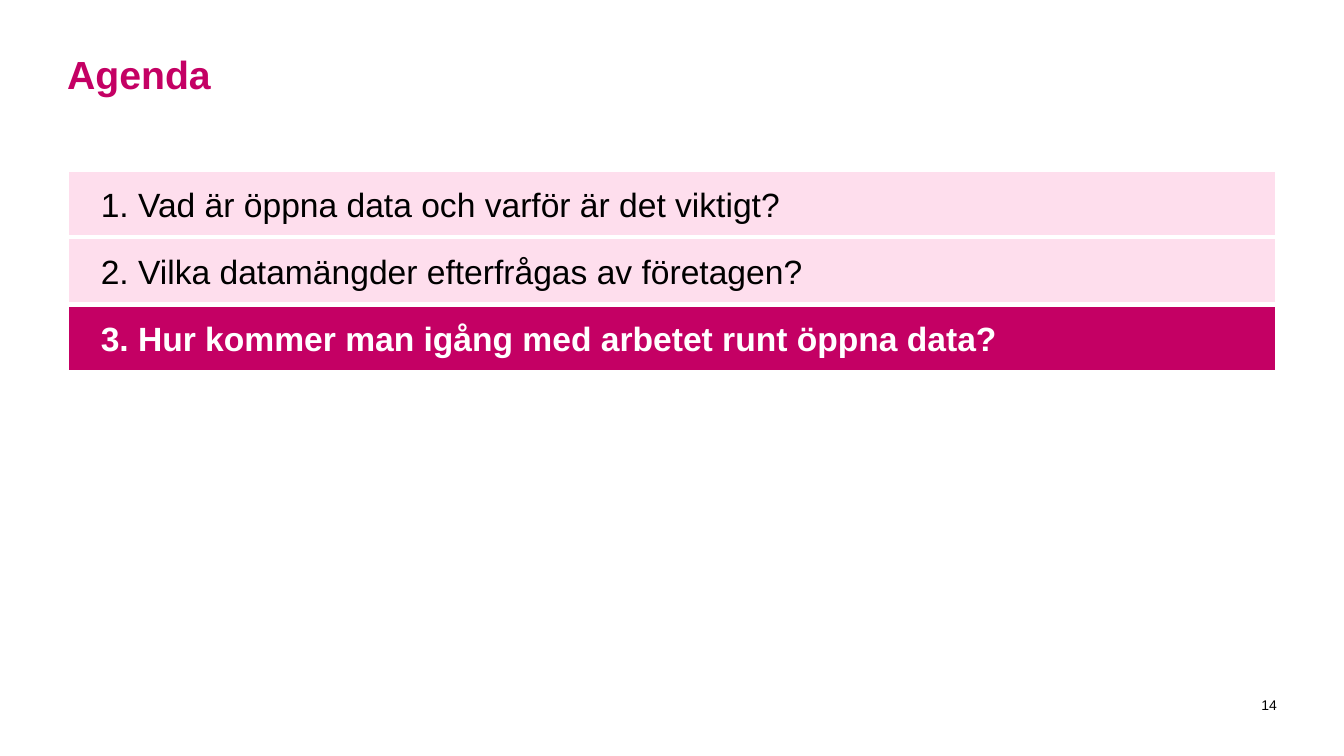
import pptx
import pptx.dml.color
import pptx.enum.shapes
import pptx.enum.text
import pptx.util

Pt = pptx.util.Pt
ALIGN = pptx.enum.text.PP_ALIGN
ANCHOR = pptx.enum.text.MSO_ANCHOR

MAGENTA = pptx.dml.color.RGBColor(0xC4, 0x00, 0x64)
PINK = pptx.dml.color.RGBColor(0xFE, 0xDE, 0xED)
BLACK = pptx.dml.color.RGBColor(0x00, 0x00, 0x00)
WHITE = pptx.dml.color.RGBColor(0xFF, 0xFF, 0xFF)

TOPICS = [
    "1. Vad är öppna data och varför är det viktigt?",
    "2. Vilka datamängder efterfrågas av företagen?",
    "3. Hur kommer man igång med arbetet runt öppna data?",
]
CURRENT_TOPIC = 2


def place(shape, box):
    shape.left, shape.top, shape.width, shape.height = (Pt(n) for n in box)


def write(shape, text, size, color, bold=False, align=ALIGN.LEFT,
          anchor=ANCHOR.MIDDLE, insets=(0, 0, 0, 0), wrap=True):
    frame = shape.text_frame
    frame.word_wrap = wrap
    frame.auto_size = pptx.enum.text.MSO_AUTO_SIZE.NONE
    frame.vertical_anchor = anchor
    (frame.margin_left, frame.margin_top,
     frame.margin_right, frame.margin_bottom) = (Pt(n) for n in insets)
    para = frame.paragraphs[0]
    para.alignment = align
    span = para.add_run()
    span.text = text
    span.font.name = "Arial"
    span.font.size = Pt(size)
    span.font.bold = bold
    span.font.color.rgb = color


def add_title(page, box, text):
    title = page.shapes.title
    place(title, box)
    write(title, text, 28, MAGENTA, bold=True, anchor=ANCHOR.TOP)


def add_agenda(page, box, topics, current):
    left, top, width, height = box
    row_height = height / len(topics)
    for index, topic in enumerate(topics):
        active = index == current
        row = page.shapes.add_shape(
            pptx.enum.shapes.MSO_SHAPE.RECTANGLE,
            Pt(left), Pt(top + index * row_height), Pt(width), Pt(row_height))
        row.shadow.inherit = False
        row.fill.solid()
        row.fill.fore_color.rgb = MAGENTA if active else PINK
        row.line.color.rgb = WHITE
        row.line.width = Pt(3)
        write(row, topic, 24, WHITE if active else BLACK, bold=active,
              insets=(24, 9, 0, 9))


def add_page_number(page, box, number):
    label = page.shapes.add_textbox(*(Pt(n) for n in box))
    write(label, number, 10, BLACK, align=ALIGN.RIGHT)


def build_agenda_slide(deck):
    page = deck.slides.add_slide(deck.slide_layouts[5])
    # Heading
    add_title(page, (48, 36, 864, 65.5), "Agenda")
    # Topic rows, with the current one highlighted
    add_agenda(page, (48, 121.5, 864, 144), TOPICS, CURRENT_TOPIC)
    # Footer
    add_page_number(page, (895, 498, 17, 11.5), "14")


def main():
    deck = pptx.Presentation()
    deck.slide_width = Pt(960)
    deck.slide_height = Pt(540)
    build_agenda_slide(deck)
    deck.save("out.pptx")


if __name__ == "__main__":
    main()
